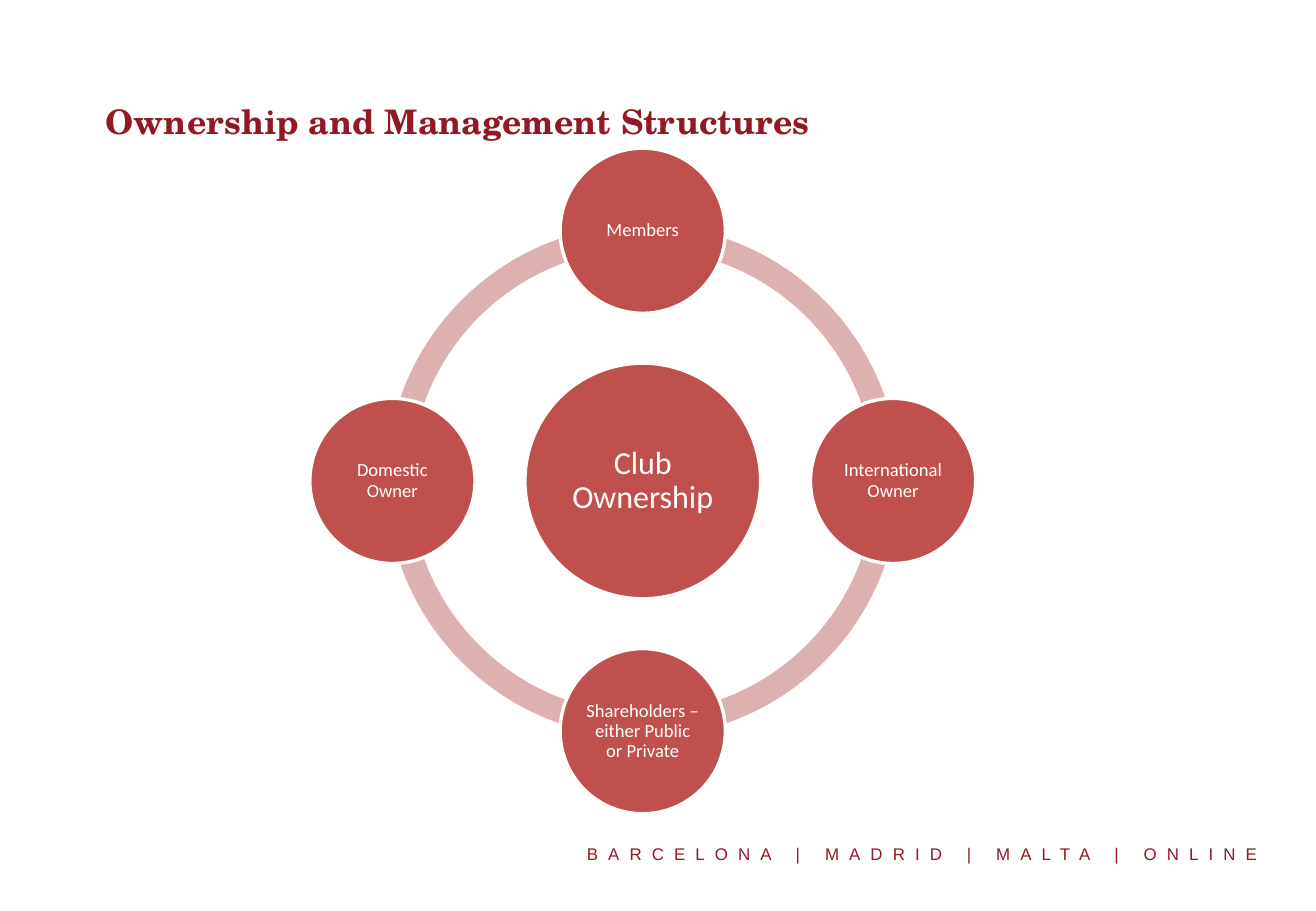
import math
import pptx
import pptx.util
import pptx.dml.color
import pptx.enum.shapes
import pptx.enum.text
import pptx.oxml
import pptx.oxml.ns

WIDE, HIGH = 10.83, 7.5
HUES = {"brand": "921824", "disc": "C0504D", "ring": "DCB1B0", "white": "FFFFFF"}
OWNERS = ["Members", "International Owner",
          "Shareholders – either Public or Private", "Domestic Owner"]
BEND = 0.55
Inch = pptx.util.Inches
Align = pptx.enum.text.PP_ALIGN
Anchor = pptx.enum.text.MSO_ANCHOR


def hue(name):
    """Return the named colour."""
    return pptx.dml.color.RGBColor.from_string(HUES[name])


def write(shape, text, face, size, tint, align, anchor, inset, bold=False):
    """Set and format one paragraph of text, with its inset in points."""
    frame = shape.text_frame
    frame.text = text
    frame.auto_size = pptx.enum.text.MSO_AUTO_SIZE.NONE
    frame.vertical_anchor = anchor
    frame.margin_left = frame.margin_right = pptx.util.Pt(inset)
    frame.margin_top = frame.margin_bottom = pptx.util.Pt(inset)
    para = frame.paragraphs[0]
    para.alignment = align
    font = para.runs[0].font
    font.name, font.size, font.bold = face, pptx.util.Pt(size), bold
    font.color.rgb = hue(tint)
    return para


def head(slide, left, top, width, height):
    """Place the title in its box."""
    title = slide.shapes.title
    title.left, title.top = Inch(left), Inch(top)
    title.width, title.height = Inch(width), Inch(height)
    write(title, "Ownership and Management Structures", "TeX Gyre Schola", 20,
          "brand", Align.LEFT, Anchor.TOP, 3.6, True)


def foot(slide, left, top, width, height):
    """Place the spaced line of cities in its box."""
    box = slide.shapes.add_textbox(*map(Inch, (left, top, width, height)))
    para = write(box, "BARCELONA | MADRID | MALTA | ONLINE", "Arial", 10,
                 "brand", Align.LEFT, Anchor.TOP, 3.6)
    box.text_frame.word_wrap = False
    para.runs[0].font._element.set("spc", "600")


def curve(lines):
    """Turn three straight steps of an outline into one cubic curve."""
    bend = pptx.oxml.parse_xml(
        "<a:cubicBezTo %s/>" % pptx.oxml.ns.nsdecls("a"))
    lines[0].addprevious(bend)
    for line in lines:
        bend.append(line[0])
        line.getparent().remove(line)


def arc(slide, mid_x, mid_y, outer, inner, start):
    """Draw a quarter of the ring from the start angle in degrees."""
    turn = math.radians(start)
    cos, sin = math.cos(turn), math.sin(turn)

    def spot(radius, along, across):
        return (Inch(mid_x + radius * (along * cos - across * sin)),
                Inch(mid_y + radius * (along * sin + across * cos)))

    quarter = [(1, 0), (1, BEND), (BEND, 1), (0, 1)]
    rim = [spot(outer, *pair) for pair in quarter]
    rim += [spot(inner, *pair) for pair in reversed(quarter)]
    form = slide.shapes.build_freeform(*rim[0])
    form.add_line_segments(rim[1:], close=True)
    part = form.convert_to_shape()
    lines = list(part._element.iter(pptx.oxml.ns.qn("a:lnTo")))
    curve(lines[:3])
    curve(lines[4:7])
    part.shadow.inherit = False
    part.fill.solid()
    part.fill.fore_color.rgb = hue("ring")
    part.line.fill.background()


def disc(slide, mid_x, mid_y, width, text, size, inset):
    """Draw a labelled circle around a centre."""
    oval = slide.shapes.add_shape(
        pptx.enum.shapes.MSO_SHAPE.OVAL, Inch(mid_x - width / 2),
        Inch(mid_y - width / 2), Inch(width), Inch(width))
    oval.shadow.inherit = False
    oval.fill.solid()
    oval.fill.fore_color.rgb = hue("disc")
    oval.line.color.rgb = hue("white")
    oval.line.width = pptx.util.Pt(2)
    para = write(oval, text, "Calibri", size, "white", Align.CENTER,
                 Anchor.MIDDLE, inset)
    oval.text_frame.word_wrap = True
    para.line_spacing = 0.9


def wheel(slide, left, top, side):
    """Draw the ring, its hub and the owners in a square box."""
    mid_x, mid_y = left + side / 2, top + side / 2
    hub, small, outer, inner = 1.94, 1.36, 2.11, 1.91
    reach = (side - small) / 2
    for start in range(0, 360, 90):
        arc(slide, mid_x, mid_y, outer, inner, start)
    disc(slide, mid_x, mid_y, hub, "Club Ownership", 19, 2)
    for step, owner in enumerate(OWNERS):
        turn = math.radians(90 * step - 90)
        disc(slide, mid_x + reach * math.cos(turn),
             mid_y + reach * math.sin(turn), small, owner, 11, 1)


def main():
    """Build the slide and save it."""
    deck = pptx.Presentation()
    deck.slide_width, deck.slide_height = Inch(WIDE), Inch(HIGH)
    slide = deck.slides.add_slide(deck.slide_layouts[5])
    foot(slide, 4.78, HIGH * 0.92, 5.72, 0.25)
    head(slide, 0.82, 0.78, 7.6, HIGH * 0.12)
    wheel(slide, 2.55, 1.22, 5.48)
    deck.save("out.pptx")


if __name__ == "__main__":
    main()
